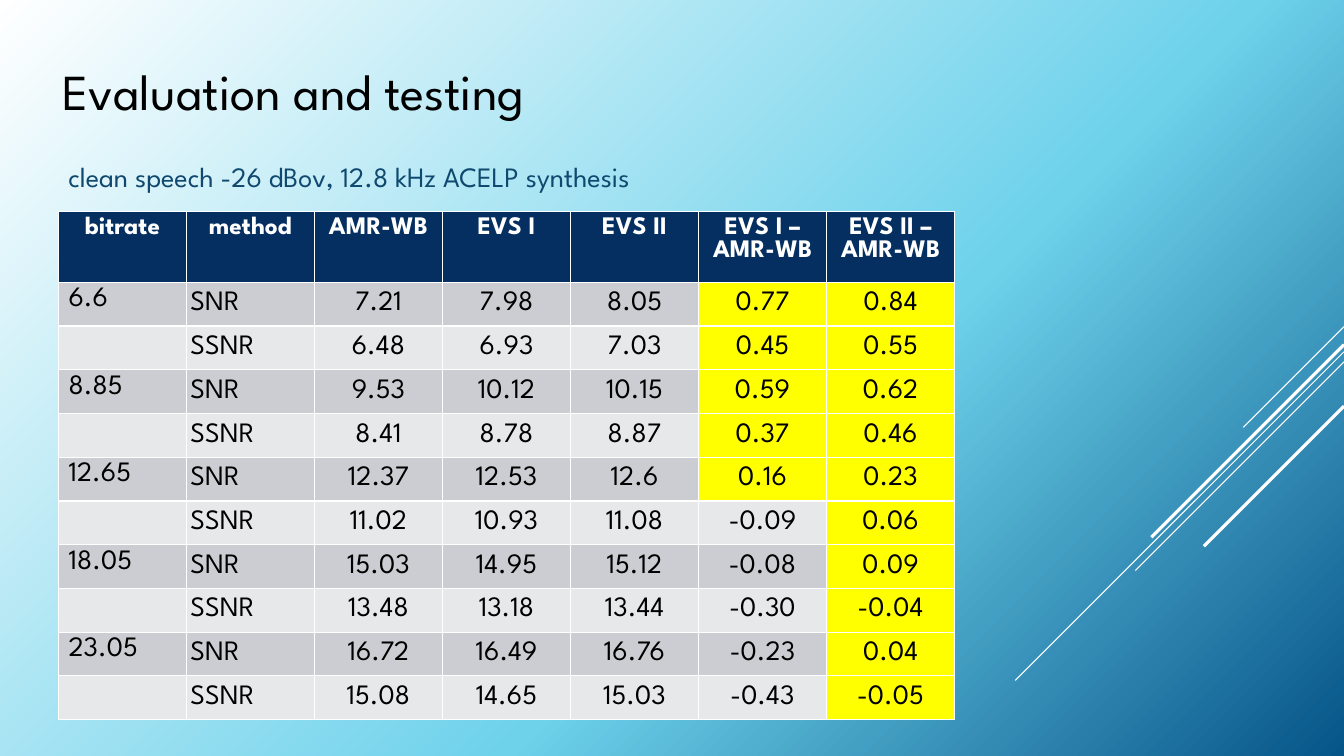
"""Build the slide on evaluation and testing of speech codecs."""
from copy import deepcopy

from lxml.etree import SubElement
from pptx import Presentation
from pptx.dml.color import RGBColor
from pptx.enum.shapes import MSO_CONNECTOR
from pptx.enum.text import MSO_ANCHOR, PP_ALIGN
from pptx.oxml.ns import qn
from pptx.util import Inches, Pt

FONT = "League Spartan"
COLORS = {
    "white": "FFFFFF", "sky": "6ED2EB", "deep": "065589",
    "black": "000000", "blue": "0F496F", "navy": "052F61",
    "dark": "CCCDD2", "light": "E7E8EA", "mark": "FFFF00",
}
HEADS = ["bitrate", "method", "AMR-WB", "EVS I", "EVS II",
         "EVS I – AMR-WB", "EVS II – AMR-WB"]
SCORES = [
    (6.6, (7.21, 7.98, 8.05), (6.48, 6.93, 7.03)),
    (8.85, (9.53, 10.12, 10.15), (8.41, 8.78, 8.87)),
    (12.65, (12.37, 12.53, 12.6), (11.02, 10.93, 11.08)),
    (18.05, (15.03, 14.95, 15.12), (13.48, 13.18, 13.44)),
    (23.05, (16.72, 16.49, 16.76), (15.08, 14.65, 15.03)),
]
RAYS = [(3.24, 1, 0.75), (3.49, 3.26, 0.75), (3.59, 2.07, 0.75),
        (3.42, 1.91, 2.25), (4.03, 1.39, 2.25)]
WIDTH, HEIGHT = 13.33, 7.5


def tint(name):
    return RGBColor.from_string(COLORS[name])


def style(para, size, color, bold=False, align=PP_ALIGN.LEFT):
    para.alignment = align
    font = para.font
    font.name, font.size, font.bold = FONT, Pt(size), bold
    font.color.rgb = tint(color)


def add_backdrop(slide):
    fill = slide.background.fill
    fill.gradient()
    fill.gradient_angle = 315
    stops = slide.element.find(".//" + qn("a:gsLst"))
    stops.append(deepcopy(stops[-1]))
    shades = [("white", 0), ("sky", 0.6), ("deep", 1)]
    for stop, (name, place) in zip(fill.gradient_stops, shades):
        stop.color.rgb = tint(name)
        stop.position = place


def add_ray(slide, top, reach, weight):
    ray = slide.shapes.add_connector(
        MSO_CONNECTOR.STRAIGHT, Inches(WIDTH), Inches(top),
        Inches(WIDTH - reach), Inches(top + reach))
    ray.line.color.rgb = tint("white")
    ray.line.width = Pt(weight)
    SubElement(ray.element.spPr, qn("a:effectLst"))


def add_text(slide, text, left, top, width, height, size, color):
    box = slide.shapes.add_textbox(
        Inches(left), Inches(top), Inches(width), Inches(height))
    box.text_frame.word_wrap = True
    para = box.text_frame.paragraphs[0]
    para.text = text
    style(para, size, color)


def list_rows():
    rows = []
    for rate, *pair in SCORES:
        labels = [f"{rate:g}", ""]
        for label, method, (base, first, second) in zip(labels, ["SNR", "SSNR"], pair):
            rows.append([label, method]
                        + [f"{score:g}" for score in (base, first, second)]
                        + [f"{score - base:.2f}" for score in (first, second)])
    return rows


def fill_cell(cell, text, shade, size, color, bold, align):
    cell.fill.solid()
    cell.fill.fore_color.rgb = tint(shade)
    para = cell.text_frame.paragraphs[0]
    para.text = text
    style(para, size, color, bold, align)


def add_scores(slide):
    rows = list_rows()
    table = slide.shapes.add_table(
        len(rows) + 1, len(HEADS), Inches(0.58), Inches(2.1),
        Inches(8.89), Inches(5.03)).table
    for col in table.columns:
        col.width = Inches(1.27)
    for row in table.rows:
        row.height = Inches(4.34 / len(rows))
    table.rows[0].height = Inches(0.69)
    for c, head in enumerate(HEADS):
        fill_cell(table.cell(0, c), head, "navy", 18, "white", True, PP_ALIGN.CENTER)
    for r, row in enumerate(rows, 1):
        for c, text in enumerate(row):
            cell = table.cell(r, c)
            marked = c == 6 or c == 5 and float(text) > 0
            shade = "mark" if marked else "dark" if r % 2 else "light"
            align = PP_ALIGN.CENTER if c > 1 else PP_ALIGN.LEFT
            fill_cell(cell, text, shade, 20, "black", False, align)
            if c > 0:
                cell.vertical_anchor = MSO_ANCHOR.MIDDLE
                cell.margin_left = cell.margin_right = Inches(0.04)
                cell.margin_top = cell.margin_bottom = 0


def main():
    deck = Presentation()
    deck.slide_width, deck.slide_height = Inches(WIDTH), Inches(HEIGHT)
    slide = deck.slides.add_slide(deck.slide_layouts[6])
    add_backdrop(slide)
    for ray in RAYS:
        add_ray(slide, *ray)
    add_text(slide, "Evaluation and testing", 0.52, 0.55, 5.66, 0.71, 36, "black")
    add_text(slide, "clean speech -26 dBov, 12.8 kHz ACELP synthesis",
             0.58, 1.53, 6.88, 5.75, 20, "blue")
    add_scores(slide)
    deck.save("out.pptx")


if __name__ == "__main__":
    main()
